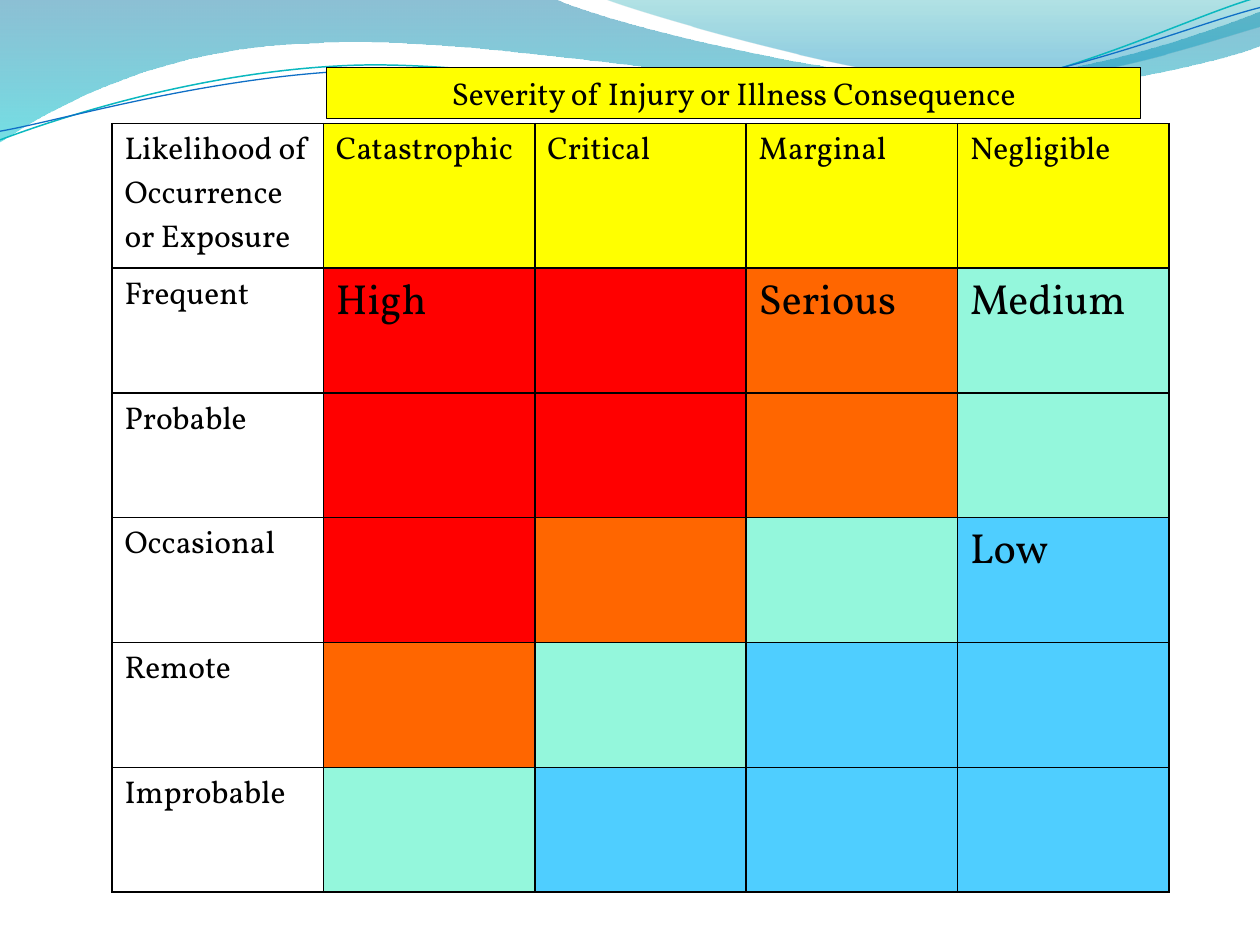
from lxml.etree import SubElement
from pptx import Presentation
from pptx.dml.color import RGBColor
from pptx.enum.shapes import MSO_SHAPE as Preset
from pptx.enum.text import MSO_ANCHOR as Anchor, PP_ALIGN as Align
from pptx.oxml import parse_xml
from pptx.oxml.ns import nsdecls, qn
from pptx.util import Pt

FONT = "Vollkorn"
BLACK = RGBColor(0x00, 0x00, 0x00)
WHITE = RGBColor(0xFF, 0xFF, 0xFF)
YELLOW = RGBColor(0xFF, 0xFF, 0x00)
RED = RGBColor(0xFF, 0x00, 0x00)
ORANGE = RGBColor(0xFF, 0x66, 0x00)
MINT = RGBColor(0x94, 0xF7, 0xDC)
SKY = RGBColor(0x4F, 0xCE, 0xFF)
DEEP_BLUE = RGBColor(0x00, 0x74, 0xA1)
AQUA = RGBColor(0x00, 0xC6, 0xCF)
TEAL = RGBColor(0x00, 0xA1, 0xA9)
OCEAN = RGBColor(0x00, 0x8B, 0xBF)
LINE_TEAL = RGBColor(0x0A, 0xB8, 0xBF)
LINE_BLUE = RGBColor(0x0F, 0x6F, 0xC6)

CURVE_ROTATION = 357.3
WIDE_WAVE = [
    (0, 0), (316.8, -0.7),
    (342.7, 12.2, 478.1, 45.4, 545.8, 45.4),
    (614.2, 45.4, 689.8, 18.7, 720, 6.5), (720.7, 25.9),
    (707.8, 31.7, 626.4, 54.7, 537.1, 54),
    (447.8, 54, 275, 20.2, 185, 24.5),
    (92.9, 25.9, 33.1, 59.8, -0.7, 81.4), (0, 0),
]
RIGHT_WAVE = [
    (344.9, -0.7), (366.5, 7.9, 491, 44.6, 553.7, 46.8),
    (616.3, 49.7, 691.9, 23, 720, 15.1), (720, 0), (344.9, -0.7),
]
TEAL_CURVE = [
    (-1.4, 63), (33.8, 51.7, 114.1, 29.4, 199.8, 29.9),
    (284.9, 30.3, 425.8, 67.3, 512.4, 64.9),
    (599, 62.4, 676.5, 25.7, 720.2, 15.5),
]
BLUE_CURVE = [
    (-1.1, 58), (32.9, 53.8, 118.3, 32.5, 204.1, 33),
    (290.6, 33.4, 428.9, 63.8, 515.5, 61.4),
    (601.3, 59.6, 678.4, 30.1, 721.4, 21.3),
]

SEVERITIES = ["Catastrophic", "Critical", "Marginal", "Negligible"]
LIKELIHOODS = ["Frequent", "Probable", "Occasional", "Remote", "Improbable"]
RISK_FILLS = [
    [RED, RED, ORANGE, MINT],
    [RED, RED, ORANGE, MINT],
    [RED, ORANGE, MINT, SKY],
    [ORANGE, MINT, SKY, SKY],
    [MINT, SKY, SKY, SKY],
]
RISK_NAMES = {(0, 0): "High", (0, 2): "Serious", (0, 3): "Medium", (2, 3): "Low"}


def add_outline(page, segments, closed):
    """Draw a freeform whose six-number segments are cubic curves."""
    points = [(Pt(segment[place]), Pt(segment[place + 1]))
              for segment in segments for place in range(0, len(segment), 2)]
    builder = page.shapes.build_freeform(*points[0])
    builder.add_line_segments(points[1:], close=closed)
    shape = builder.convert_to_shape()
    shape.shadow.inherit = False
    steps = iter(list(shape._element.iter(qn("a:lnTo"))))
    for segment in segments[1:]:
        step = next(steps)
        if len(segment) == 6:
            step.tag = qn("a:cubicBezTo")
            for follower in (next(steps), next(steps)):
                step.append(follower[0])
                follower.getparent().remove(follower)
    return shape


def add_wave(page, segments, stops):
    """Add a wave with a translucent vertical gradient."""
    wave = add_outline(page, segments, True)
    wave.line.fill.background()
    wave.fill.gradient()
    gradient = wave._element.spPr.find(qn("a:gradFill"))
    for child in list(gradient):
        gradient.remove(child)
    stop_list = SubElement(gradient, qn("a:gsLst"))
    for place, color, opacity in stops:
        stop = SubElement(stop_list, qn("a:gs"), pos=str(place * 1000))
        tint = SubElement(stop, qn("a:srgbClr"), val=str(color))
        SubElement(tint, qn("a:alpha"), val=str(opacity * 1000))
    SubElement(gradient, qn("a:lin"), ang="5400000", scaled="0")


def add_curve(page, segments, color, width):
    """Add an open curved line, slightly rotated."""
    curve = add_outline(page, segments, False)
    curve.rotation = CURVE_ROTATION
    curve.fill.background()
    curve.line.color.rgb = color
    curve.line.width = Pt(width)


def add_header_waves(page):
    """Place the waves and curves along the top of the page."""
    add_wave(page, WIDE_WAVE, [(0, DEEP_BLUE, 45), (100, AQUA, 55)])
    add_wave(page, RIGHT_WAVE, [(0, TEAL, 30), (80, OCEAN, 45)])
    add_curve(page, TEAL_CURVE, LINE_TEAL, 0.85)
    add_curve(page, BLUE_CURVE, LINE_BLUE, 0.75)


def write(frame, text, size):
    """Write one run in the first paragraph and return the paragraph."""
    para = frame.paragraphs[0]
    span = para.add_run()
    span.text = text
    span.font.name = FONT
    span.font.size = Pt(size)
    span.font.color.rgb = BLACK
    return para


def style_cell(cell, text, size, fill):
    """Give a cell its borders, fill and text."""
    properties = cell._tc.get_or_add_tcPr()
    for side in "LRTB":
        properties.append(parse_xml(
            f'<a:ln{side} {nsdecls("a")} w="{Pt(1)}"><a:solidFill>'
            f'<a:srgbClr val="{BLACK}"/></a:solidFill></a:ln{side}>'))
    cell.fill.solid()
    cell.fill.fore_color.rgb = fill
    if text:
        write(cell.text_frame, text, size)


def add_risk_matrix(page, left, top, width, height):
    """Place the table of likelihood against severity."""
    rows, columns = len(LIKELIHOODS) + 1, len(SEVERITIES) + 1
    table = page.shapes.add_table(
        rows, columns, Pt(left), Pt(top), Pt(width), Pt(height)).table
    table.first_row = table.horz_banding = False
    for column in table.columns:
        column.width = Pt(width / columns)
    for row in table.rows:
        row.height = Pt(height / rows)
    style_cell(table.cell(0, 0), "Likelihood of Occurrence or Exposure", 18, WHITE)
    for index, severity in enumerate(SEVERITIES, 1):
        style_cell(table.cell(0, index), severity, 18, YELLOW)
    for row, (likelihood, fills) in enumerate(zip(LIKELIHOODS, RISK_FILLS)):
        style_cell(table.cell(row + 1, 0), likelihood, 18, WHITE)
        for column, fill in enumerate(fills):
            name = RISK_NAMES.get((row, column))
            style_cell(table.cell(row + 1, column + 1), name, 24, fill)


def add_severity_banner(page, left, top, width, height):
    """Place the heading above the severity columns."""
    banner = page.shapes.add_shape(
        Preset.RECTANGLE, Pt(left), Pt(top), Pt(width), Pt(height))
    banner.shadow.inherit = False
    banner.fill.solid()
    banner.fill.fore_color.rgb = YELLOW
    banner.line.color.rgb = BLACK
    banner.line.width = Pt(0.75)
    frame = banner.text_frame
    frame.word_wrap = True
    frame.vertical_anchor = Anchor.TOP
    write(frame, "Severity of Injury or Illness Consequence", 18).alignment = Align.CENTER


def main():
    """Build and save the deck."""
    deck = Presentation()
    deck.slide_width, deck.slide_height = Pt(720), Pt(540)
    page = deck.slides.add_slide(deck.slide_layouts[6])
    add_header_waves(page)
    add_risk_matrix(page, 64, 70.6, 604, 428.2)
    add_severity_banner(page, 186.6, 38.6, 465.2, 29.1)
    deck.save("out.pptx")


if __name__ == "__main__":
    main()
